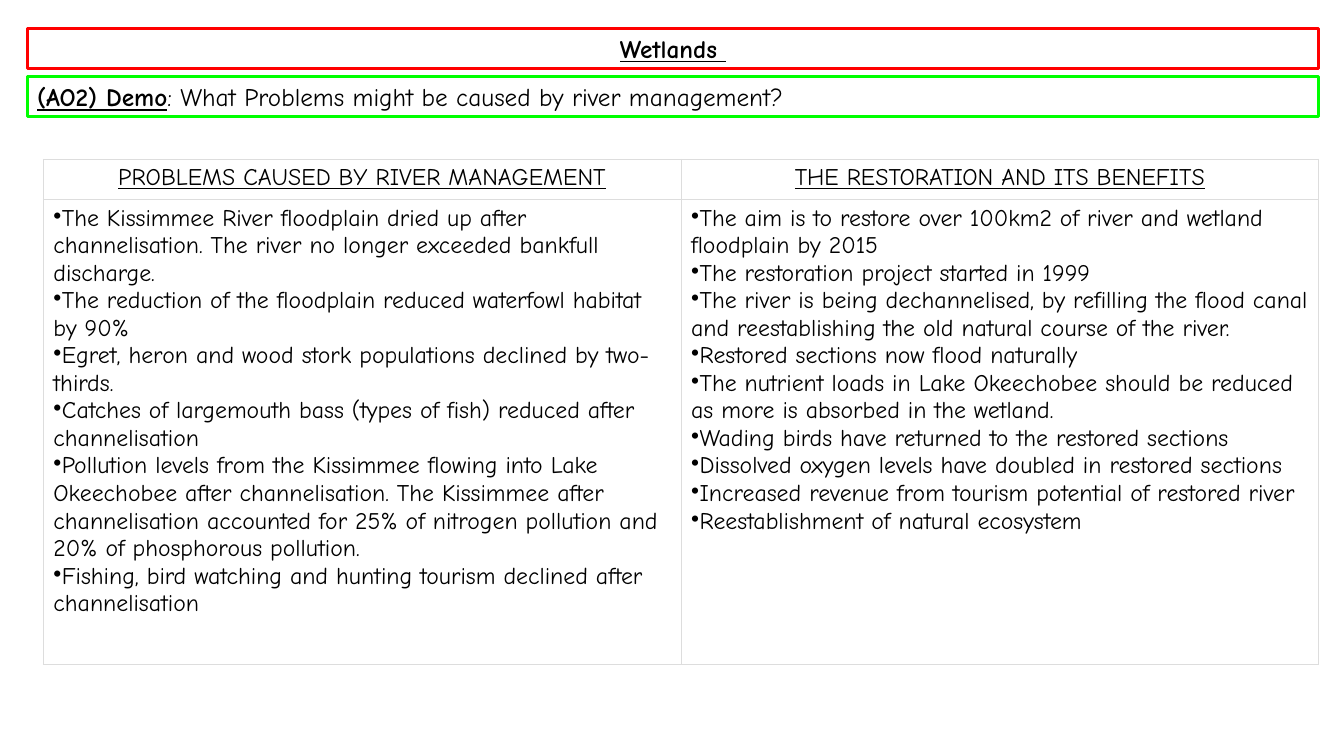
from lxml import etree
from pptx import Presentation
from pptx.dml.color import RGBColor
from pptx.enum import shapes, text
from pptx.oxml import ns
from pptx.util import Inches, Pt

FONT = "Comic Neue"
COLORS = {"ink": "000000", "paper": "FFFFFF", "grid": "DDDDDD", "title": "FF0000", "demo": "00FF00"}
BANNERS = [
    ("title", 0.28, text.PP_ALIGN.CENTER, [("Wetlands ", True)]),
    ("demo", 0.76, text.PP_ALIGN.LEFT, [
        ("(AO2) Demo", True),
        (": What Problems might be caused by river management?", False),
    ]),
]
TOPICS = {
    "PROBLEMS CAUSED BY RIVER MANAGEMENT": [
        "The Kissimmee River floodplain dried up after channelisation. The river no longer exceeded bankfull discharge.",
        "The reduction of the floodplain reduced waterfowl habitat by 90%",
        "Egret, heron and wood stork populations declined by two-thirds.",
        "Catches of largemouth bass (types of fish) reduced after channelisation",
        "Pollution levels from the Kissimmee flowing into Lake Okeechobee after channelisation. "
        "The Kissimmee after channelisation accounted for 25% of nitrogen pollution and 20% of phosphorous pollution.",
        "Fishing, bird watching and hunting tourism declined after channelisation",
    ],
    "THE RESTORATION AND ITS BENEFITS": [
        "The aim is to restore over 100km2 of river and wetland floodplain by 2015",
        "The restoration project started in 1999",
        "The river is being dechannelised, by refilling the flood canal and reestablishing the old natural course of the river.",
        "Restored sections now flood naturally",
        "The nutrient loads in Lake Okeechobee should be reduced as more is absorbed in the wetland.",
        "Wading birds have returned to the restored sections",
        "Dissolved oxygen levels have doubled in restored sections",
        "Increased revenue from tourism potential of restored river",
        "Reestablishment of natural ecosystem",
    ],
}
LEFT, WIDTH, HEIGHT = 0.27, 12.81, 0.4
GRID_LEFT, GRID_TOP, GRID_WIDTH = 0.43, 1.58, 12.65
ROWS = [0.4, 4.61]


def color(name):
    return RGBColor.from_string(COLORS[name])


def style(run, size, bold=False, under=False):
    font = run.font
    font.name, font.size = FONT, Pt(size)
    font.bold, font.underline = bold, under
    font.color.rgb = color("ink")


def add_banner(slide, name, top, align, parts):
    box = slide.shapes.add_shape(shapes.MSO_SHAPE.RECTANGLE, Inches(LEFT), Inches(top), Inches(WIDTH), Inches(HEIGHT))
    box.shadow.inherit = False
    box.fill.background()
    box.line.color.rgb = color(name)
    box.line.width = Pt(2.25)
    frame = box.text_frame
    frame.word_wrap = True
    frame.auto_size = text.MSO_AUTO_SIZE.SHAPE_TO_FIT_TEXT
    para = frame.paragraphs[0]
    para.alignment = align
    for words, strong in parts:
        run = para.add_run()
        run.text = words
        style(run, 18, strong, strong)


def add_borders(cell):
    props = cell._tc.get_or_add_tcPr()
    for index, side in enumerate(("lnL", "lnR", "lnT", "lnB")):
        line = etree.Element(ns.qn("a:" + side), w=str(Pt(0.75)))
        fill = etree.SubElement(line, ns.qn("a:solidFill"))
        etree.SubElement(fill, ns.qn("a:srgbClr"), val=COLORS["grid"])
        props.insert(index, line)


def fill_cell(cell, lines, head):
    cell.fill.solid()
    cell.fill.fore_color.rgb = color("paper")
    add_borders(cell)
    cell.text_frame.text = "\n".join(lines)
    for para in cell.text_frame.paragraphs:
        style(para.runs[0], 17, under=head)
        if head:
            para.alignment = text.PP_ALIGN.CENTER
        else:
            props = para._p.get_or_add_pPr()
            props.set("marL", "0")
            props.set("indent", "0")
            etree.SubElement(props, ns.qn("a:buChar"), char="•")


def add_topics(slide):
    table = slide.shapes.add_table(
        len(ROWS), len(TOPICS), Inches(GRID_LEFT), Inches(GRID_TOP), Inches(GRID_WIDTH), Inches(sum(ROWS))
    ).table
    table.first_row = table.horz_banding = False
    for row, height in zip(table.rows, ROWS):
        row.height = Inches(height)
    for col, (head, points) in enumerate(TOPICS.items()):
        table.columns[col].width = Inches(GRID_WIDTH / len(TOPICS))
        fill_cell(table.cell(0, col), [head], True)
        fill_cell(table.cell(1, col), points, False)


def main():
    deck = Presentation()
    deck.slide_width, deck.slide_height = Inches(13.33), Inches(7.5)
    slide = deck.slides.add_slide(deck.slide_layouts[6])
    add_topics(slide)
    for banner in BANNERS:
        add_banner(slide, *banner)
    deck.save("out.pptx")


if __name__ == "__main__":
    main()
